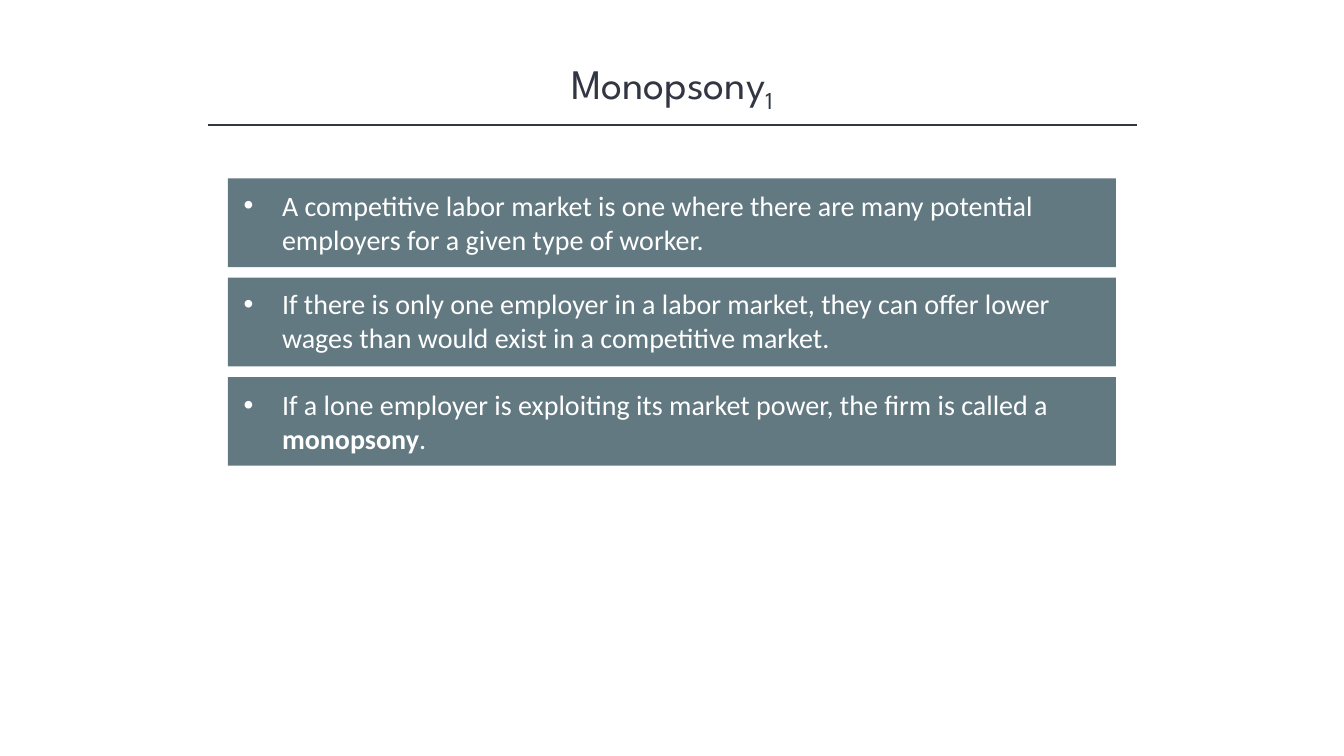
from dataclasses import dataclass

from lxml import etree
from pptx import Presentation
from pptx.dml.color import RGBColor
from pptx.enum.shapes import MSO_CONNECTOR, MSO_SHAPE
from pptx.enum.text import MSO_ANCHOR, PP_ALIGN
from pptx.oxml.ns import qn
from pptx.shapes.autoshape import Shape
from pptx.shapes.group import GroupShape
from pptx.slide import Slide
from pptx.text.text import _Paragraph
from pptx.util import Emu, Inches, Pt

RECTANGLE = MSO_SHAPE.RECTANGLE
STRAIGHT = MSO_CONNECTOR.STRAIGHT
TOP = MSO_ANCHOR.TOP
LEFT = PP_ALIGN.LEFT
CENTER = PP_ALIGN.CENTER

COLUMNS, ROWS = 160, 90
CELL = Inches(13.3333) // COLUMNS + 1


@dataclass(frozen=True)
class Theme:
    ink: RGBColor = RGBColor(0x32, 0x35, 0x42)
    panel: RGBColor = RGBColor(0x62, 0x79, 0x81)
    paper: RGBColor = RGBColor(0xFF, 0xFF, 0xFF)
    heading_font: str = "League Spartan"
    body_font: str = "Calibri"
    heading_size: Pt = Pt(30)
    body_size: Pt = Pt(20)
    rule_width: Pt = Pt(1)


@dataclass(frozen=True)
class Area:
    column: float
    row: float
    columns: float
    rows: float


@dataclass(frozen=True)
class Phrase:
    text: str
    bold: bool = False
    subscript: bool = False


@dataclass(frozen=True)
class Statement:
    phrases: tuple[Phrase, ...]
    text_drop: float


THEME = Theme()
HEADING = Area(20, 6.24, 120, 7.32)
HEADING_PHRASES = (Phrase("Monopsony"), Phrase("1", subscript=True))
RULE = Area(24.72, 14.88, 110.64, 0)
FIRST_PANEL = Area(27.12, 21.24, 105.72, 10.56)
PANEL_PITCH = 11.82
TEXT_INDENT = 0.72
TEXT_COLUMNS, TEXT_ROWS = 102.48, 9.24
HANGING = Inches(0.38)

STATEMENTS = (
    Statement((Phrase("A competitive labor market is one where there are many "
                      "potential employers for a given type of worker."),), 0.6),
    Statement((Phrase("If there is only one employer in a labor market, they can offer "
                      "lower wages than would exist in a competitive market."),), 0.48),
    Statement((Phrase("If a lone employer is exploiting its market power, "
                      "the firm is called a "),
               Phrase("monopsony", bold=True), Phrase(".")), 0.72),
)


def grid(cells: float) -> Emu:
    return Emu(round(cells * CELL))


def place(area: Area) -> tuple[Emu, Emu, Emu, Emu]:
    return grid(area.column), grid(area.row), grid(area.columns), grid(area.rows)


def write(paragraph: _Paragraph, phrases: tuple[Phrase, ...],
          font: str, size: Pt, color: RGBColor) -> None:
    for phrase in phrases:
        run = paragraph.add_run()
        run.text = phrase.text
        run.font.name = font
        run.font.size = size
        run.font.bold = phrase.bold
        run.font.color.rgb = color
        if phrase.subscript:
            run.font._element.set("baseline", "-25000")


def add_bullet(paragraph: _Paragraph) -> None:
    properties = paragraph._p.get_or_add_pPr()
    properties.set("marL", str(HANGING))
    properties.set("indent", str(-HANGING))
    etree.SubElement(properties, qn("a:buFont")).set("typeface", "Arial")
    etree.SubElement(properties, qn("a:buChar")).set("char", "•")


def draw_heading(slide: Slide) -> None:
    frame = slide.shapes.add_textbox(*place(HEADING)).text_frame
    frame.word_wrap = True
    frame.vertical_anchor = TOP
    paragraph = frame.paragraphs[0]
    paragraph.alignment = CENTER
    write(paragraph, HEADING_PHRASES, THEME.heading_font, THEME.heading_size, THEME.ink)


def draw_rule(slide: Slide) -> None:
    left, top, width, height = place(RULE)
    rule = slide.shapes.add_connector(STRAIGHT, left, top, left + width, top + height)
    rule.line.color.rgb = THEME.ink
    rule.line.width = THEME.rule_width
    etree.SubElement(rule._element.spPr, qn("a:effectLst"))


def add_panel(group: GroupShape, area: Area) -> Shape:
    panel = group.shapes.add_shape(RECTANGLE, *place(area))
    panel.shadow.inherit = False
    panel.fill.solid()
    panel.fill.fore_color.rgb = THEME.panel
    panel.line.fill.background()
    return panel


def draw_statement(slide: Slide, index: int, statement: Statement) -> None:
    row = FIRST_PANEL.row + index * PANEL_PITCH
    group = slide.shapes.add_group_shape()
    add_panel(group, Area(FIRST_PANEL.column, row, FIRST_PANEL.columns, FIRST_PANEL.rows))
    caption = add_panel(group, Area(FIRST_PANEL.column + TEXT_INDENT,
                                    row + statement.text_drop, TEXT_COLUMNS, TEXT_ROWS))
    frame = caption.text_frame
    frame.word_wrap = True
    frame.vertical_anchor = TOP
    paragraph = frame.paragraphs[0]
    paragraph.alignment = LEFT
    add_bullet(paragraph)
    write(paragraph, statement.phrases, THEME.body_font, THEME.body_size, THEME.paper)


def main() -> None:
    presentation = Presentation()
    presentation.slide_width = grid(COLUMNS)
    presentation.slide_height = grid(ROWS)
    slide = presentation.slides.add_slide(presentation.slide_layouts[6])
    slide.background.fill.solid()
    slide.background.fill.fore_color.rgb = THEME.paper
    draw_heading(slide)
    draw_rule(slide)
    for index, statement in enumerate(STATEMENTS):
        draw_statement(slide, index, statement)
    presentation.save("out.pptx")


if __name__ == "__main__":
    main()
